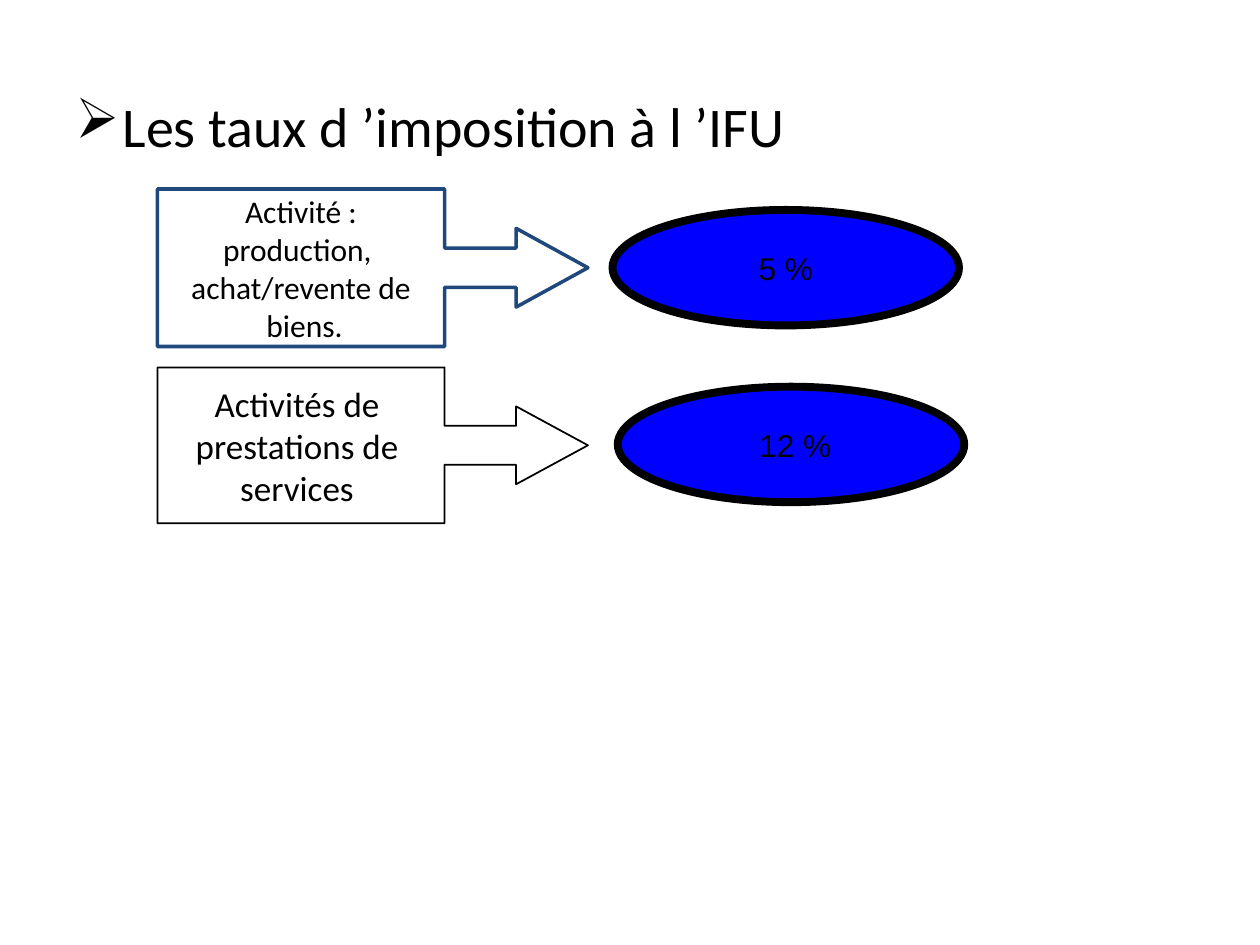
"""Build a slide showing the IFU tax rate for each kind of activity."""
from lxml import etree
from pptx import Presentation
from pptx.dml.color import RGBColor
from pptx.enum.shapes import MSO_SHAPE
from pptx.enum.text import MSO_ANCHOR, PP_ALIGN
from pptx.oxml.ns import qn
from pptx.util import Pt

CALLOUT, ELLIPSE = MSO_SHAPE.RIGHT_ARROW_CALLOUT, MSO_SHAPE.OVAL
LEFT, CENTER = PP_ALIGN.LEFT, PP_ALIGN.CENTER
TOP, MIDDLE = MSO_ANCHOR.TOP, MSO_ANCHOR.MIDDLE

THEME = {
    "black": "000000", "white": "FFFFFF", "navy": "1F497D", "blue": "0000FF",
    "body": "Calibri", "rate": "Arial",
    "heading_size": 32, "rate_size": 18,
}

HEADING = "Les taux d\u00a0’imposition à l\u00a0’IFU"
HEADING_BOX = (36, 49, 648, 433.5)
HEADING_INDENT = 27

RATES = [
    {"activity": ["Activité :", "production, ", "achat/revente de", " biens."],
     "size": 18, "outline": "navy", "weight": 2, "head": 0.456,
     "activity_box": (90, 108, 246, 90),
     "rate": "5 %", "rate_at": (350, 120)},
    {"activity": ["Activités de ", "prestations de ", "services "],
     "size": 20, "outline": "black", "weight": 1, "head": 0.461,
     "activity_box": (90, 210, 246, 89),
     "rate": " 12 %", "rate_at": (353, 221)},
]
RATE_SIZE = (198, 66)


def write(holder, lines, *, size, font, align=CENTER, anchor=MIDDLE, wrap=False, bullet=None):
    frame = holder.text_frame
    frame.word_wrap = wrap
    frame.vertical_anchor = anchor
    for index, line in enumerate(lines):
        paragraph = frame.paragraphs[0] if index == 0 else frame.add_paragraph()
        paragraph.alignment = align
        if bullet:
            properties = paragraph._p.get_or_add_pPr()
            properties.set("marL", str(Pt(HEADING_INDENT)))
            properties.set("indent", str(-Pt(HEADING_INDENT)))
            etree.SubElement(properties, qn("a:buChar"), char=bullet)
        run = paragraph.add_run()
        run.text = line
        run.font.size = Pt(size)
        run.font.name = font
        run.font.color.rgb = RGBColor.from_string(THEME["black"])


def draw(slide, kind, box, *, fill, outline, weight):
    shape = slide.shapes.add_shape(kind, *map(Pt, box))
    shape.shadow.inherit = False
    shape.fill.solid()
    shape.fill.fore_color.rgb = RGBColor.from_string(THEME[fill])
    shape.line.color.rgb = RGBColor.from_string(THEME[outline])
    shape.line.width = Pt(weight)
    return shape


def main():
    deck = Presentation()
    deck.slide_width, deck.slide_height = Pt(720), Pt(540)
    slide = deck.slides.add_slide(deck.slide_layouts[6])

    heading = slide.shapes.add_textbox(*map(Pt, HEADING_BOX))
    write(heading, [HEADING], size=THEME["heading_size"], font=THEME["body"],
          align=LEFT, anchor=TOP, wrap=True, bullet="➢")

    for entry in RATES:
        activity = draw(slide, CALLOUT, entry["activity_box"], fill="white",
                        outline=entry["outline"], weight=entry["weight"])
        for index, value in enumerate((0.25, 0.25, entry["head"], 0.667)):
            activity.adjustments[index] = value
        write(activity, entry["activity"], size=entry["size"], font=THEME["body"])

    for entry in RATES:
        rate = draw(slide, ELLIPSE, entry["rate_at"] + RATE_SIZE, fill="blue",
                    outline="black", weight=4.5)
        write(rate, [entry["rate"]], size=THEME["rate_size"], font=THEME["rate"])

    deck.save("out.pptx")


if __name__ == "__main__":
    main()
